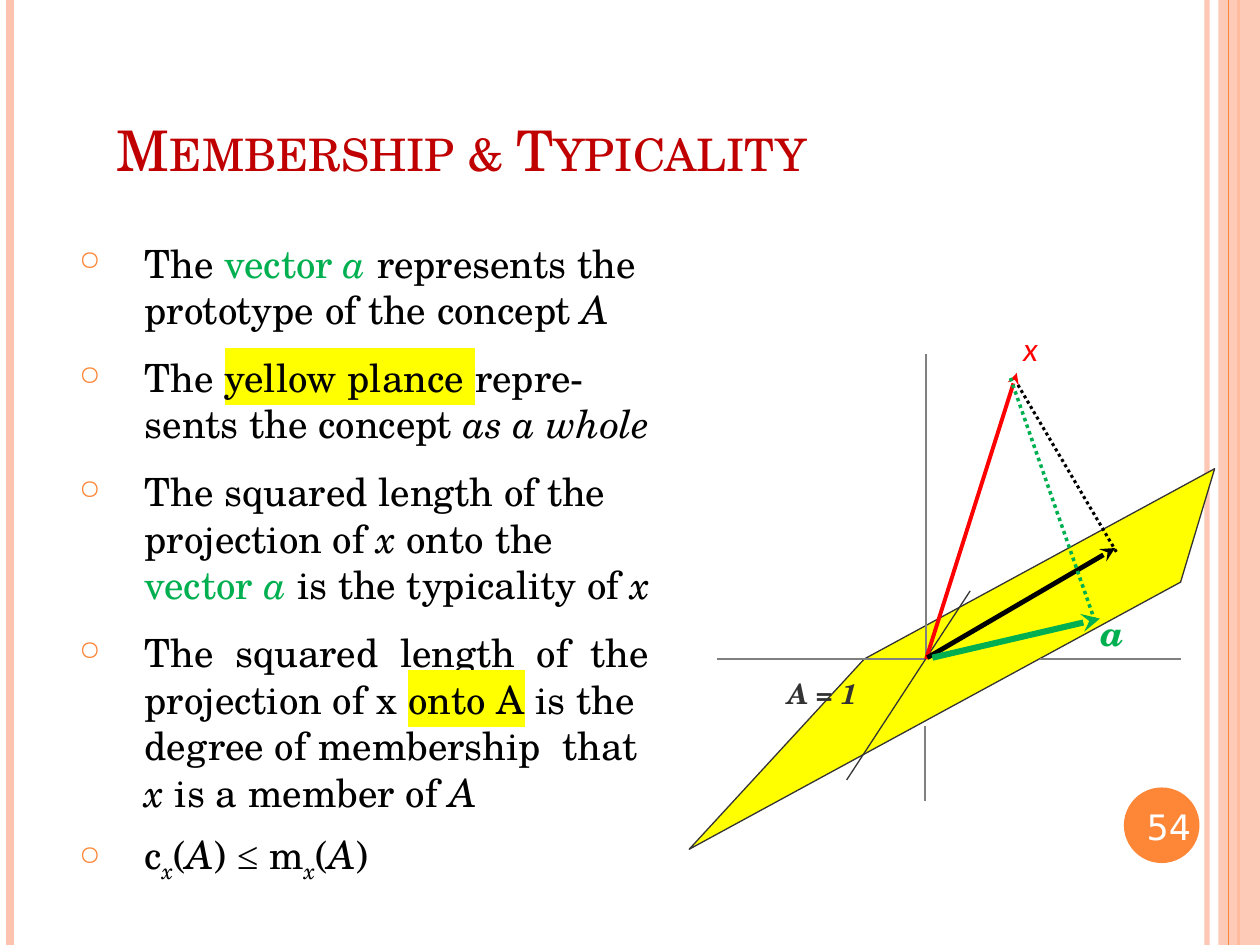
import pptx
import pptx.dml.color
import pptx.enum.dml
import pptx.enum.shapes
import pptx.enum.text
import pptx.oxml
import pptx.oxml.ns
import pptx.util

Inches = pptx.util.Inches
Pt = pptx.util.Pt
RGBColor = pptx.dml.color.RGBColor
SHAPE = pptx.enum.shapes.MSO_SHAPE
ALIGN = pptx.enum.text.PP_ALIGN
ANCHOR = pptx.enum.text.MSO_ANCHOR
DOTTED = pptx.enum.dml.MSO_LINE.ROUND_DOT

PEACH = RGBColor(0xFE, 0xC3, 0xAE)
ORANGE = RGBColor(0xFE, 0x86, 0x37)
CRIMSON = RGBColor(0xC0, 0x00, 0x00)
RED = RGBColor(0xFF, 0x00, 0x00)
GREEN = RGBColor(0x00, 0xB0, 0x50)
YELLOW = RGBColor(0xFF, 0xFF, 0x00)
GRAY = RGBColor(0x80, 0x80, 0x80)
CHARCOAL = RGBColor(0x33, 0x33, 0x33)
BLACK = RGBColor(0x00, 0x00, 0x00)
WHITE = RGBColor(0xFF, 0xFF, 0xFF)
SERIF = "TeX Gyre Schola"

ITALIC = {"italic": True}
SUB = {"italic": True, "sub": True}
VECTOR = {"color": GREEN}
VECTOR_NAME = {"color": GREEN, "italic": True}
MARKED = {"marked": True}

POINTS = [
    [("The ", {}), ("vector ", VECTOR), ("a", VECTOR_NAME),
     (" represents the prototype of the concept ", {}), ("A", ITALIC)],
    [("The ", {}), ("yellow plance ", MARKED),
     ("repre-sents the concept ", {}), ("as a whole", ITALIC)],
    [("The squared length of the projection of ", {}), ("x", ITALIC),
     (" onto the ", {}), ("vector ", VECTOR), ("a", VECTOR_NAME),
     (" is the typicality of ", {}), ("x", ITALIC)],
    [("The  squared  length  of  the projection of x ", {}), ("onto A", MARKED),
     (" is the degree of membership  that ", {}), ("x", ITALIC),
     (" is a member of ", {}), ("A", ITALIC)],
    [("c", {}), ("x", SUB), ("(", {}), ("A", ITALIC), (") ", {}),
     ("≤", {"font": "Times New Roman"}), (" m", {}), ("x", SUB),
     ("(", {}), ("A", ITALIC), (")", {})],
]


def element(tag, attributes=""):
    return pptx.oxml.parse_xml(f"<a:{tag} {pptx.oxml.ns.nsdecls('a')} {attributes}/>")


def set_alpha(fill_owner, percent):
    for color in fill_owner.iter(pptx.oxml.ns.qn("a:srgbClr")):
        color.append(element("alpha", f'val="{percent * 1000}"'))


def add_line(slide, start, end, color, width, dash=None, arrow=False):
    line = slide.shapes.add_connector(
        pptx.enum.shapes.MSO_CONNECTOR.STRAIGHT,
        *(Inches(value) for value in (*start, *end)))
    line.line.color.rgb = color
    line.line.width = Pt(width)
    if dash:
        line.line.dash_style = dash
    if arrow:
        line.line._get_or_add_ln().append(element("tailEnd", 'type="stealth"'))
    line._element.spPr.append(element("effectLst"))
    return line


def add_block(slide, kind, left, top, width, height, color):
    block = slide.shapes.add_shape(
        kind, Inches(left), Inches(top), Inches(width), Inches(height))
    block.shadow.inherit = False
    block.fill.solid()
    block.fill.fore_color.rgb = color
    block.line.fill.background()
    return block


def add_frame(slide, left, top, width, height):
    frame = slide.shapes.add_textbox(
        Inches(left), Inches(top), Inches(width), Inches(height)).text_frame
    frame.word_wrap = True
    return frame


def style_run(run, size, color=BLACK, font=SERIF, bold=False, italic=False,
              sub=False, marked=False):
    run.font.size = Pt(size)
    run.font.name = font
    run.font.bold = bold
    run.font.italic = italic
    run.font.color.rgb = color
    properties = run.font._element
    if sub:
        properties.set("baseline", "-25000")
    if marked:
        highlight = element("highlight")
        highlight.append(element("srgbClr", f'val="{YELLOW}"'))
        properties.find(pptx.oxml.ns.qn("a:solidFill")).addnext(highlight)


def add_label(slide, left, top, width, height, text, size, inset=True, **style):
    frame = add_frame(slide, left, top, width, height)
    if not inset:
        frame.margin_left = frame.margin_right = 0
        frame.margin_top = frame.margin_bottom = 0
    frame.text = text
    paragraph = frame.paragraphs[0]
    paragraph.alignment = ALIGN.CENTER
    style_run(paragraph.runs[0], size, **style)


def add_borders(slide, left, top, width, height):
    right, bottom = left + width, top + height

    def stripe(x, color, weight):
        return add_line(slide, (x, top), (x, bottom), color, weight)

    set_alpha(stripe(right - 0.42, PEACH, 3)._element.spPr, 93)
    stripe(left + 0.08, PEACH, 4.5)
    stripe(right - 0.17, ORANGE, 1.5)
    band = add_block(slide, SHAPE.RECTANGLE, right - 0.33, top, 0.33, height, PEACH)
    set_alpha(band._element.spPr, 87)
    stripe(right - 0.25, ORANGE, 0.75)


def add_page_number(slide, left, top, size, number):
    add_block(slide, SHAPE.OVAL, left, top, size, size, ORANGE)
    frame = add_frame(slide, left + 0.09, top + 0.03, size - 0.06, size - 0.04)
    frame.margin_left = Inches(0.09)
    frame.margin_right = frame.margin_top = frame.margin_bottom = 0
    frame.vertical_anchor = ANCHOR.MIDDLE
    frame.text = number
    style_run(frame.paragraphs[0].runs[0], 20, WHITE, "DejaVu Sans")


def add_title(slide, left, top, width, height, text):
    frame = add_frame(slide, left, top, width, height)
    frame.vertical_anchor = ANCHOR.BOTTOM
    frame.text = text
    run = frame.paragraphs[0].runs[0]
    style_run(run, 32, CRIMSON)
    run.font._element.set("cap", "small")


def add_points(slide, left, top, width, height, points):
    frame = add_frame(slide, left, top, width, height)
    for index, pieces in enumerate(points):
        paragraph = frame.add_paragraph() if index else frame.paragraphs[0]
        paragraph.space_before = Pt(9 if index == len(points) - 1 else 12)
        properties = paragraph._p.get_or_add_pPr()
        properties.set("marL", str(Inches(0.52)))
        properties.set("indent", str(-Inches(0.52)))
        bullet_color = element("buClr")
        bullet_color.append(element("srgbClr", f'val="{ORANGE}"'))
        properties.append(bullet_color)
        properties.append(element("buSzPct", 'val="70000"'))
        properties.append(element("buChar", 'char="○"'))
        for text, style in pieces:
            run = paragraph.add_run()
            run.text = text
            style_run(run, 22.2, **style)


def add_vector_diagram(slide, left, top):
    def at(x, y):
        return left + x, top + y

    def line(start, end, *style, **options):
        add_line(slide, at(*start), at(*end), *style, **options)

    corners = [tuple(Inches(value) for value in at(*corner)) for corner in
               ((0, 4.17), (3.9, 2.05), (4.17, 1.15), (1.39, 2.66))]
    builder = slide.shapes.build_freeform(*corners[0], scale=1.0)
    builder.add_line_segments(corners[1:], close=True)
    plane = builder.convert_to_shape()
    plane.shadow.inherit = False
    plane.fill.solid()
    plane.fill.fore_color.rgb = YELLOW
    plane.line.color.rgb = CHARCOAL
    plane.line.width = Pt(0.75)

    origin = (1.88, 2.66)
    for start, end in ((origin, (1.88, 0.24)), ((2.78, 2.66), (3.9, 2.66)),
                       ((0.22, 2.66), origin), ((1.87, 3.79), (1.87, 3.19))):
        line(start, end, GRAY, 1.25)
    line((2.23, 2.12), (1.25, 3.62), CHARCOAL, 0.75)

    line(origin, (2.6, 0.39), RED, 2.25, arrow=True)
    add_label(slide, *at(2.29, 0), 0.84, 0.91, "x", 18,
              color=RED, font="Lato", italic=True)
    add_label(slide, *at(0.29, 2.75), 1.53, 0.91, "A = 1", 16,
              color=CHARCOAL, bold=True, italic=True)
    line((3.39, 1.81), (2.6, 0.47), BLACK, 1.75, dash=DOTTED)
    add_label(slide, *at(3.01, 2.28), 0.7, 0.33, "a", 20, inset=False,
              color=GREEN, bold=True, italic=True)
    line((1.89, 2.65), (3.38, 1.78), BLACK, 2.75, arrow=True)
    line((2.55, 0.43), (3.22, 2.36), GREEN, 2, dash=DOTTED)
    line((1.93, 2.65), (3.26, 2.34), GREEN, 3.5, arrow=True)


def main():
    presentation = pptx.Presentation()
    presentation.slide_width = Inches(10)
    presentation.slide_height = Inches(7.5)
    slide = presentation.slides.add_slide(presentation.slide_layouts[6])
    add_borders(slide, 0, 0, 10, 7.5)
    add_page_number(slide, 8.92, 6.25, 0.6, "54")
    add_title(slide, 0.83, 0.78, 8.68, 0.72, "Membership & Typicality")
    add_vector_diagram(slide, 5.47, 2.57)
    add_points(slide, 0.53, 1.85, 4.78, 5.06, POINTS)
    presentation.save("out.pptx")


if __name__ == "__main__":
    main()
